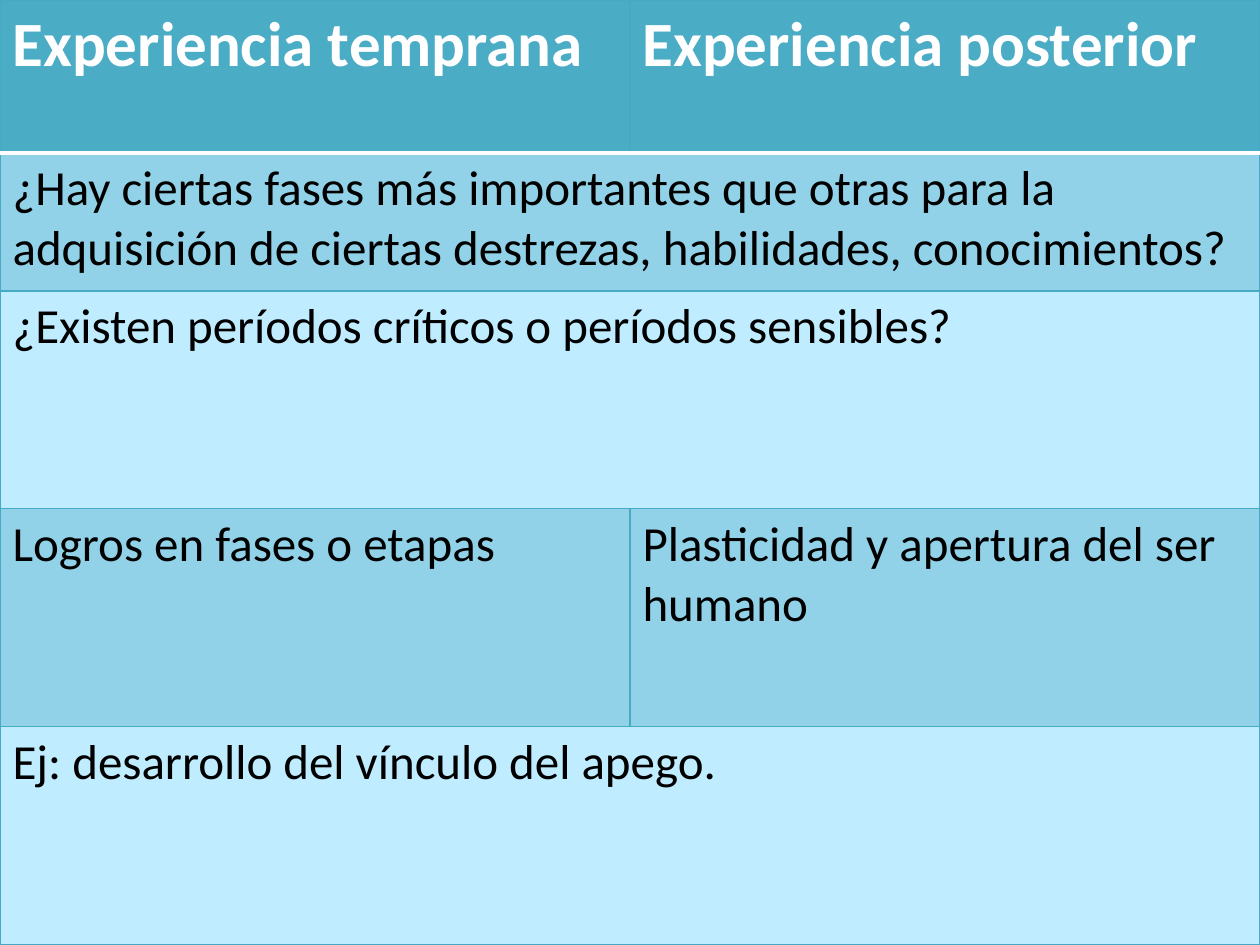
from dataclasses import dataclass

from lxml import etree
from pptx import Presentation
from pptx.dml.color import RGBColor
from pptx.oxml.ns import qn
from pptx.table import Table, _Cell
from pptx.util import Emu, Pt

PX = 914400 // 126
WIDTH, HEIGHT = 1260, 945
BLANK_LAYOUT = 6
FONT = "Calibri"

WHITE = RGBColor(0xFF, 0xFF, 0xFF)
BLACK = RGBColor(0x00, 0x00, 0x00)
TEAL = RGBColor(0x4B, 0xAC, 0xC6)
BORDER = RGBColor(0x46, 0xAA, 0xC5)
MID_BLUE = RGBColor(0x91, 0xD2, 0xE8)
PALE_BLUE = RGBColor(0xBF, 0xEC, 0xFF)


@dataclass(frozen=True)
class Row:
    """A table row; a single text spans every column."""
    height: int
    texts: tuple[str, ...]
    fill: RGBColor
    header: bool = False


ROWS = (
    Row(153, ("Experiencia temprana", "Experiencia posterior"), TEAL, True),
    Row(138, ("¿Hay ciertas fases más importantes que otras para la adquisición "
              "de ciertas destrezas, habilidades, conocimientos?",), MID_BLUE),
    Row(218, ("¿Existen períodos críticos o períodos sensibles?",), PALE_BLUE),
    Row(218, ("Logros en fases o etapas", "Plasticidad y apertura del ser humano"),
        MID_BLUE),
    Row(218, ("Ej: desarrollo del vínculo del apego.",), PALE_BLUE),
)


def px(n: int) -> Emu:
    return Emu(n * PX)


def set_border(cell: _Cell, side: str, color: RGBColor, width: float) -> None:
    ln = etree.SubElement(cell._tc.get_or_add_tcPr(), qn(f"a:ln{side}"),
                          w=str(Pt(width)))
    fill = etree.SubElement(ln, qn("a:solidFill"))
    etree.SubElement(fill, qn("a:srgbClr"), val=str(color))


def style_cell(cell: _Cell, row: Row, below_header: bool) -> None:
    # Borders come before the fill in the cell properties
    thick = {"T": below_header, "B": row.header}
    for side in "LRTB":
        if thick.get(side):
            set_border(cell, side, WHITE, 2)
        else:
            set_border(cell, side, BORDER, 0.75)
    cell.fill.solid()
    cell.fill.fore_color.rgb = row.fill


def write_text(cell: _Cell, text: str, header: bool) -> None:
    r = cell.text_frame.paragraphs[0].add_run()
    r.text = text
    r.font.name = FONT
    r.font.size = Pt(36 if header else 28)
    r.font.bold = header
    r.font.color.rgb = WHITE if header else BLACK


def fill_row(table: Table, i: int, row: Row) -> None:
    table.rows[i].height = px(row.height)
    cells = list(table.rows[i].cells)
    for cell in cells:
        style_cell(cell, row, i > 0 and ROWS[i - 1].header)
    if len(row.texts) == 1:
        cells[0].merge(cells[-1])
    for cell, text in zip(cells, row.texts):
        write_text(cell, text, row.header)


def main() -> None:
    prs = Presentation()
    prs.slide_width, prs.slide_height = px(WIDTH), px(HEIGHT)
    s = prs.slides.add_slide(prs.slide_layouts[BLANK_LAYOUT])

    # Full-slide comparison table with two equal columns
    table = s.shapes.add_table(len(ROWS), 2, 0, 0, px(WIDTH), px(HEIGHT)).table
    table.horz_banding = False
    for i, row in enumerate(ROWS):
        fill_row(table, i, row)

    prs.save("out.pptx")


if __name__ == "__main__":
    main()
